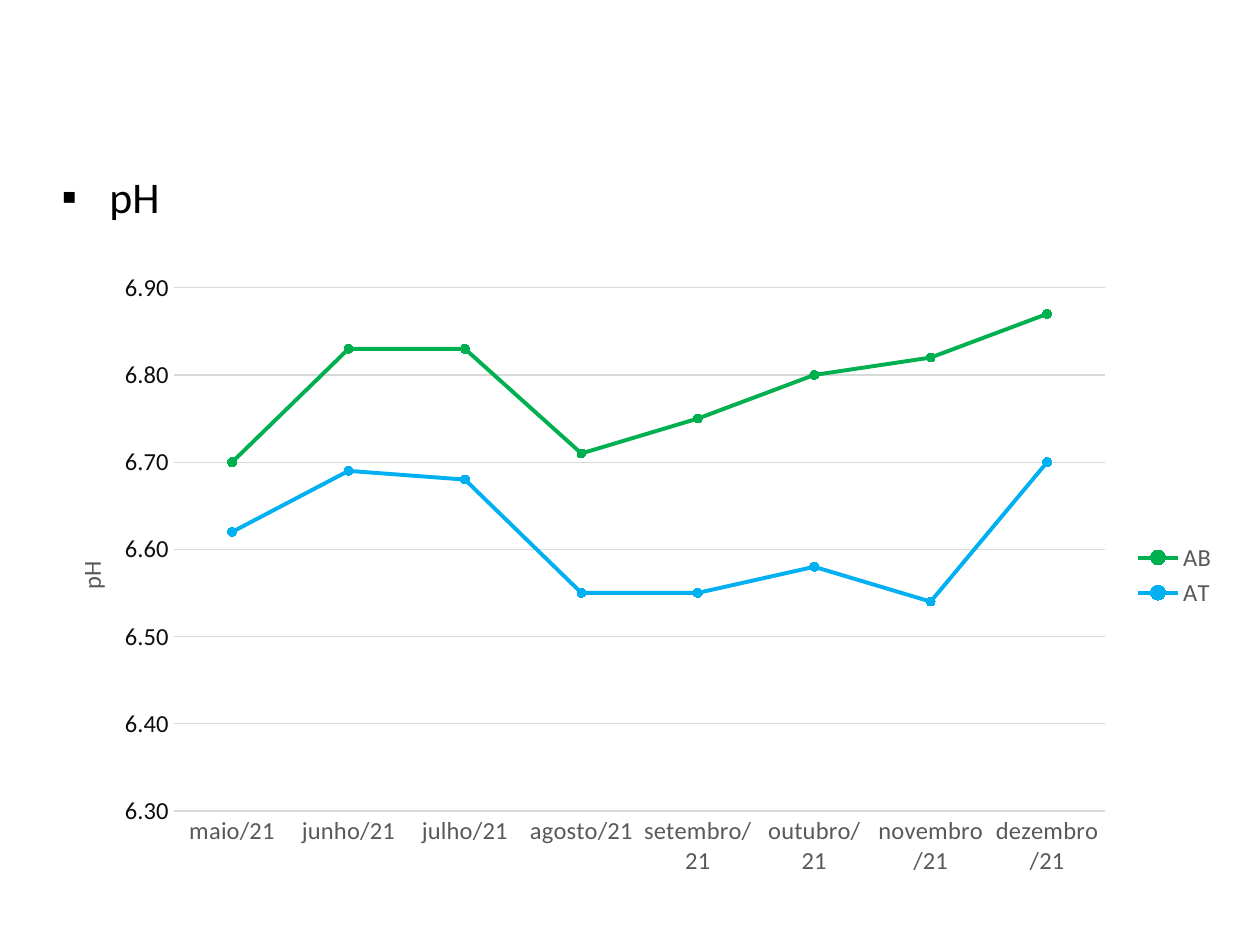
from pptx import Presentation
from pptx.chart.data import CategoryChartData as Data
from pptx.dml.color import RGBColor as RGB
from pptx.enum.chart import (XL_CHART_TYPE as Kind, XL_LEGEND_POSITION as Side,
                             XL_MARKER_STYLE as Mark, XL_TICK_MARK as Tick)
from pptx.enum.text import MSO_AUTO_SIZE as Fit
from pptx.oxml import parse_xml
from pptx.oxml.ns import nsdecls, qn
from pptx.util import Inches, Pt

# Content
HEAD = "pH"
UNIT = "pH"
MONTHS = ["maio", "junho", "julho", "agosto",
          "setembro", "outubro", "novembro", "dezembro"]
YEAR = "21"
LINES = [
    ("AB", "00B050", [6.70, 6.83, 6.83, 6.71, 6.75, 6.80, 6.82, 6.87]),
    ("AT", "00B0F0", [6.62, 6.69, 6.68, 6.55, 6.55, 6.58, 6.54, 6.70]),
]
THEME = {"font": "Calibri", "head": 25, "label": 14, "ink": "000000",
         "dark": "0D0D0D", "gray": "595959", "grid": "D9D9D9"}


def style(font, size, color):
    font.name = THEME["font"]
    font.size = Pt(THEME[size])
    font.bold = False
    font.color.rgb = RGB.from_string(THEME[color])


def stroke(line, color, width):
    line.color.rgb = RGB.from_string(color)
    line.width = Pt(width)


def place(node, after, inner=False, **spots):
    """Set a manual layout, in fractions of the chart."""
    for old in node.findall(qn("c:layout")):
        node.remove(old)
    target = '<c:layoutTarget val="inner"/>' if inner else ""
    modes = "".join(f'<c:{k}Mode val="edge"/>' for k in spots if k in "xy")
    sizes = "".join(f'<c:{k} val="{v}"/>' for k, v in spots.items())
    node.insert(after, parse_xml(
        f'<c:layout {nsdecls("c")}><c:manualLayout>{target}{modes}{sizes}'
        '</c:manualLayout></c:layout>'))


def add_head(slide):
    box = slide.shapes.add_textbox(Inches(0.39), Inches(1.3),
                                   Inches(0.98), Inches(0.52))
    frame = box.text_frame
    frame.word_wrap = False
    frame.auto_size = Fit.SHAPE_TO_FIT_TEXT
    para = frame.paragraphs[0]
    para.text = HEAD
    props = para._p.get_or_add_pPr()
    props.set("marL", str(Inches(0.38)))
    props.set("indent", str(-Inches(0.38)))
    props.append(parse_xml(f'<a:buFont {nsdecls("a")} typeface="Arial"/>'))
    props.append(parse_xml(f'<a:buChar {nsdecls("a")} char="▪"/>'))
    style(para.font, "head", "ink")


def add_graph(slide):
    data = Data(number_format="0.00")
    data.categories = [f"{month}/{YEAR}" for month in MONTHS]
    for name, _, vals in LINES:
        data.add_series(name, vals)
    chart = slide.shapes.add_chart(
        Kind.LINE_MARKERS, Inches(0.27), Inches(2.07),
        Inches(9.49), Inches(4.99), data).chart
    style(chart.font, "label", "ink")
    chart.has_title = False
    place(chart._chartSpace.chart.plotArea, 0, inner=True,
          x=0.117, y=0.043, w=0.779, h=0.832)

    # Series
    plot = chart.plots[0]
    plot.vary_by_categories = False
    for line, (_, color, _) in zip(plot.series, LINES):
        line.smooth = False
        stroke(line.format.line, color, 2.25)
        dot = line.marker
        dot.style, dot.size = Mark.CIRCLE, 5
        dot.format.fill.solid()
        dot.format.fill.fore_color.rgb = RGB.from_string(color)
        stroke(dot.format.line, color, 0.75)

    # Axes
    cat, val = chart.category_axis, chart.value_axis
    for axis, color in ((cat, "gray"), (val, "dark")):
        axis.major_tick_mark = axis.minor_tick_mark = Tick.NONE
        style(axis.tick_labels.font, "label", color)
    stroke(cat.format.line, THEME["grid"], 0.75)
    val.format.line.fill.background()
    val.minimum_scale, val.maximum_scale, val.major_unit = 6.3, 6.9, 0.1
    val.has_major_gridlines = True
    stroke(val.major_gridlines.format.line, THEME["grid"], 0.75)
    val.tick_labels.number_format = "0.00"
    val.tick_labels.number_format_is_linked = False

    # Axis title
    title = val.axis_title
    title.text_frame.text = UNIT
    style(title.text_frame.paragraphs[0].font, "label", "gray")
    body = title.text_frame._txBody.bodyPr
    body.set("rot", "-5400000")
    body.set("vert", "horz")
    place(title._element, 1, x=0.03, y=0.47)

    # Legend
    chart.has_legend = True
    chart.legend.position = Side.RIGHT
    chart.legend.include_in_layout = False
    style(chart.legend.font, "label", "gray")


def main():
    deck = Presentation()
    deck.slide_width, deck.slide_height = Inches(10), Inches(7.5)
    slide = deck.slides.add_slide(deck.slide_layouts[6])
    add_head(slide)
    add_graph(slide)
    deck.save("out.pptx")


if __name__ == "__main__":
    main()
